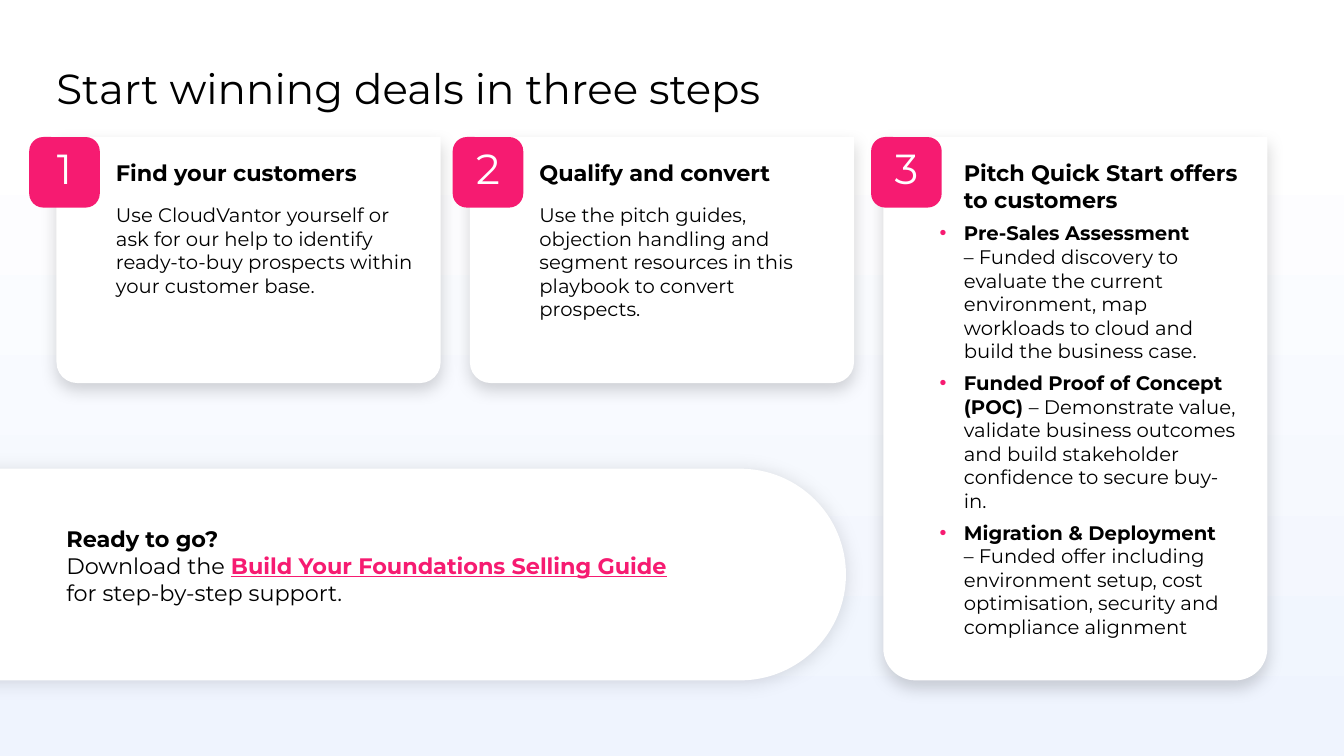
from lxml.etree import SubElement
from pptx import Presentation
from pptx.dml.color import RGBColor
from pptx.enum.shapes import MSO_SHAPE as Shape
from pptx.enum.text import MSO_ANCHOR as Anchor, PP_ALIGN as Align
from pptx.oxml import parse_xml
from pptx.oxml.ns import nsdecls, qn
from pptx.util import Inches, Pt

BLACK, WHITE, PINK, MIST = "000000", "FFFFFF", "F61B71", "EFF4FE"
MARGIN, COLUMN, CARD_WIDTH = 0.56, 4.1, 3.81
CARD_TOP, TEXT_TOP, PANEL_BOTTOM = 1.36, 1.58, 6.75
BADGE, HANG = 0.7, 0.24

deck = Presentation()
deck.slide_width, deck.slide_height = Inches(13.33), Inches(7.5)
slide = deck.slides.add_slide(deck.slide_layouts[6])


def add_panel(kind, box, color, corner=None, shadow=None):
    """Add a borderless shape; shadow is (opacity %, blur pt, distance pt)."""
    panel = slide.shapes.add_shape(kind, *map(Inches, box))
    panel.shadow.inherit = False
    panel.line.fill.background()
    panel.fill.solid()
    panel.fill.fore_color.rgb = RGBColor.from_string(color)
    if corner is not None:
        panel.adjustments[0] = corner
    if shadow:
        opacity, blur, distance = shadow
        effects = panel._element.spPr.find(qn("a:effectLst"))
        effects.append(parse_xml(
            f'<a:outerShdw {nsdecls("a")} blurRad="{Pt(blur)}" dist="{Pt(distance)}" '
            f'dir="5400000" algn="t" rotWithShape="0"><a:srgbClr val="{BLACK}">'
            f'<a:alpha val="{opacity * 1000}"/></a:srgbClr></a:outerShdw>'))
    return panel


def write(frame, paragraphs, inset=0):
    """Fill a frame with paragraphs, each a list of (text, size, bold, color) runs."""
    frame.word_wrap = True
    frame.margin_left = frame.margin_right = Inches(inset)
    frame.margin_top = frame.margin_bottom = Inches(inset / 2)
    frame.text = "\n".join("" for _ in paragraphs)
    for paragraph, parts in zip(frame.paragraphs, paragraphs):
        for text, size, bold, color in parts:
            run = paragraph.add_run()
            run.text = text.rstrip("\v")
            run.font.name, run.font.size, run.font.bold = "Montserrat", Pt(size), bold
            run.font.color.rgb = RGBColor.from_string(color)
            if text.endswith("\v"):
                paragraph.add_line_break()
                line_break = paragraph._p.findall(qn("a:br"))[-1]
                SubElement(line_break, qn("a:rPr"), sz=str(size * 100))
    return frame.paragraphs


backdrop = add_panel(Shape.RECTANGLE, (0, 1.14, 13.33, 6.36), WHITE)
backdrop.fill.gradient()
backdrop.fill.gradient_angle = 270
for stop, color, position in zip(backdrop.fill.gradient_stops, (WHITE, MIST), (0, 1)):
    stop.color.rgb = RGBColor.from_string(color)
    stop.position = position

title = slide.shapes.add_textbox(*map(Inches, (MARGIN, 0.56, 11.47, 0.56))).text_frame
title.vertical_anchor = Anchor.BOTTOM
write(title, [[("Start winning deals in three steps", 30, False, BLACK)]])[0].line_spacing = Pt(30)

# Each step: card height, badge left, text left, text width, heading, body paragraphs
steps = [
    (2.44, 0.29, 1.15, 2.98, "Find your customers",
     [[("Use CloudVantor yourself or ask for our help to identify ready-to-buy "
        "prospects within your customer base.", 14, False, BLACK)]]),
    (2.44, 4.49, 5.35, 2.92, "Qualify and convert",
     [[("Use the pitch guides, objection handling and segment resources in this "
        "playbook to convert prospects.", 14, False, BLACK)]]),
    (PANEL_BOTTOM - CARD_TOP, 8.64, 9.32, 2.97, "Pitch Quick Start offers to customers",
     [[(offer, 14, True, BLACK), (detail, 14, False, BLACK)] for offer, detail in (
         ("Pre-Sales Assessment\v",
          "– Funded discovery to evaluate the current environment, map workloads "
          "to cloud and build the business case."),
         ("Funded Proof of Concept (POC) ",
          "– Demonstrate value, validate business outcomes and build stakeholder "
          "confidence to secure buy-in."),
         ("Migration & Deployment\v",
          "– Funded offer including environment setup, cost optimisation, security "
          "and compliance alignment"))]),
]

for index, (height, badge_left, text_left, text_width, heading, body) in enumerate(steps):
    card = add_panel(Shape.ROUND_2_SAME_RECTANGLE,
                     (MARGIN + index * COLUMN, CARD_TOP, CARD_WIDTH, height),
                     WHITE, 0.084, (17, 11.8, 5.2))
    card.rotation = 180

    badge = add_panel(Shape.ROUNDED_RECTANGLE, (badge_left, CARD_TOP, BADGE, BADGE), PINK, 0.2)
    badge.text_frame.vertical_anchor = Anchor.MIDDLE
    number = write(badge.text_frame, [[(str(index + 1), 30, False, WHITE)]])[0]
    number.alignment, number.line_spacing = Align.CENTER, Pt(30)

    step = slide.shapes.add_textbox(
        *map(Inches, (text_left, TEXT_TOP, text_width, height - 0.22))).text_frame
    bulleted = len(body) > 1
    first, *rest = write(step, [[(heading, 16, True, BLACK)], *body])
    if bulleted:
        first._p.get_or_add_pPr().set("marL", str(Inches(HANG)))
    for paragraph in rest:
        paragraph.space_before = Pt(6 if bulleted else 12)
        if bulleted:
            properties = paragraph._p.get_or_add_pPr()
            properties.set("marL", str(Inches(HANG)))
            properties.set("indent", str(-Inches(HANG)))
            bullet_color = SubElement(properties, qn("a:buClr"))
            SubElement(bullet_color, qn("a:srgbClr"), val=PINK)
            SubElement(properties, qn("a:buFont"), typeface="Arial")
            SubElement(properties, qn("a:buChar"), char="•")

add_panel(Shape.ROUNDED_RECTANGLE, (-1.83, 4.65, 10.22, PANEL_BOTTOM - 4.65),
          WHITE, 0.5, (12, 14, 1))
call_to_action = slide.shapes.add_textbox(*map(Inches, (MARGIN, 5.16, 6.61, 0.91))).text_frame
lines = write(call_to_action, [
    [("Ready to go?", 16, True, BLACK)],
    [("Download the ", 16, False, BLACK),
     ("Build Your Foundations Selling Guide", 16, True, PINK)],
    [("for step-by-step support.", 16, False, BLACK)],
], inset=0.1)
lines[1].runs[1].font.underline = True

deck.save("out.pptx")
